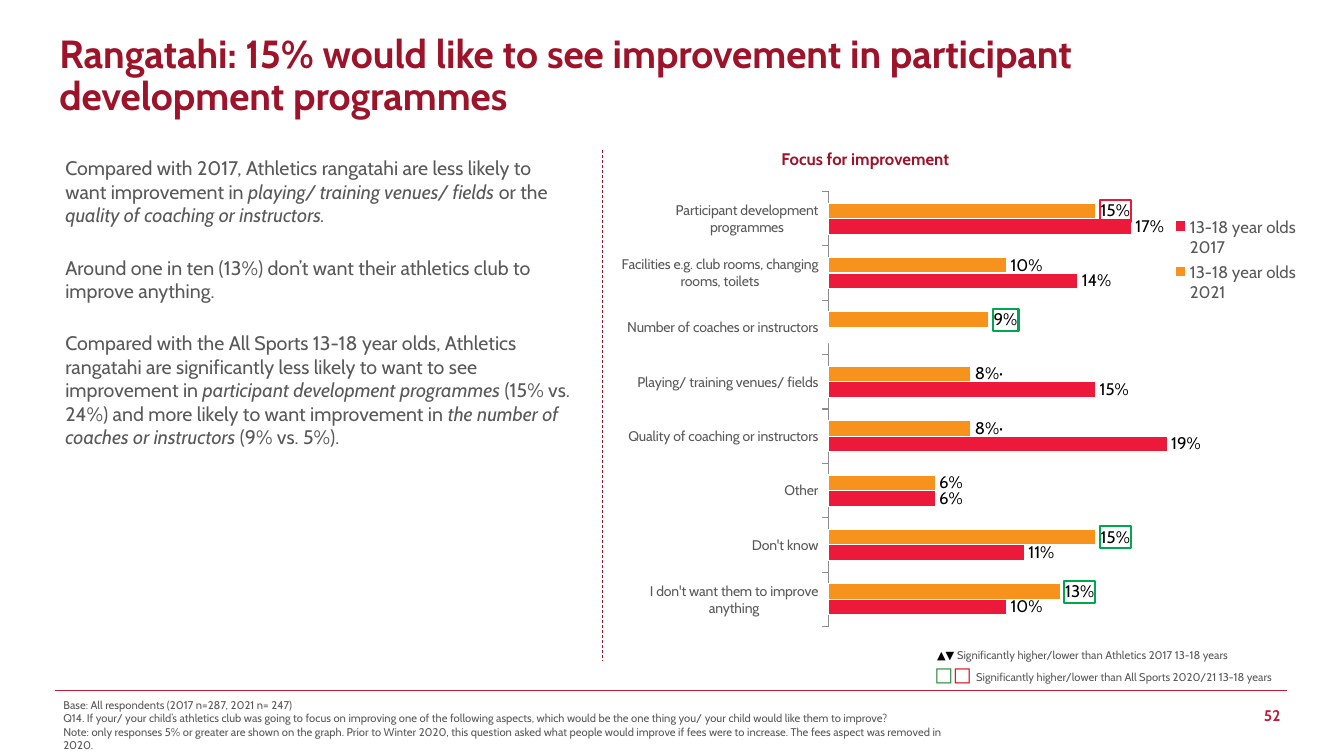
import lxml.etree
import pptx
import pptx.chart.data
import pptx.dml.color
import pptx.enum.chart
import pptx.enum.dml
import pptx.enum.shapes
import pptx.enum.text
import pptx.oxml
import pptx.oxml.ns
import pptx.util

Inches = pptx.util.Inches
Pt = pptx.util.Pt
qn = pptx.oxml.ns.qn
ALIGN = pptx.enum.text.PP_ALIGN
ANCHOR = pptx.enum.text.MSO_ANCHOR

WINE, ROSE, GREY, BLACK, WHITE = "9C132A", "BE1D37", "595959", "000000", "FFFFFF"
ORANGE, RED, GREEN = "F7931D", "ED193A", "00A651"


def tint(code):
    return pptx.dml.color.RGBColor.from_string(code)


def style(font, size=12, color=GREY, bold=False, italic=False):
    font.name, font.size = "Cabin", Pt(size)
    font.bold, font.italic = bold, italic
    font.color.rgb = tint(color)


def write(para, text, **form):
    run = para.add_run()
    run.text = text
    style(run.font, **form)


class Deck:
    def __init__(self):
        self.file = pptx.Presentation()
        self.file.slide_width, self.file.slide_height = Inches(13.33), Inches(7.5)
        self.slide = self.file.slides.add_slide(self.file.slide_layouts[6])

    def text(self, box, paras, align=ALIGN.LEFT, anchor=ANCHOR.TOP, inset=(0.1, 0.05),
             after=0, space=None, fill=None, **form):
        """Each paragraph is a list of (text, format) runs."""
        place = [Inches(n) for n in box]
        if fill:
            shape = self.slide.shapes.add_shape(pptx.enum.shapes.MSO_SHAPE.RECTANGLE, *place)
            shape.shadow.inherit = False
            shape.fill.solid()
            shape.fill.fore_color.rgb = tint(fill)
            shape.line.fill.background()
        else:
            shape = self.slide.shapes.add_textbox(*place)
        frame = shape.text_frame
        frame.word_wrap = True
        frame.vertical_anchor = anchor
        frame.margin_left = frame.margin_right = Inches(inset[0])
        frame.margin_top = frame.margin_bottom = Inches(inset[1])
        for i, runs in enumerate(paras):
            para = frame.add_paragraph() if i else frame.paragraphs[0]
            para.alignment, para.space_after = align, Pt(after)
            if space:
                para.line_spacing = space
            for words, extra in runs:
                write(para, words, **{**form, **extra})

    def line(self, start, end, color, width, dash=None):
        rule = self.slide.shapes.add_connector(
            pptx.enum.shapes.MSO_CONNECTOR.STRAIGHT, *[Inches(n) for n in (*start, *end)])
        rule.line.color.rgb, rule.line.width = tint(color), Pt(width)
        if dash:
            rule.line.dash_style = dash
        lxml.etree.SubElement(rule._element.spPr, qn("a:effectLst"))

    def bars(self, box, cats, series):
        """Each series is (name, values, colour)."""
        data = pptx.chart.data.CategoryChartData(number_format="0%")
        data.categories = cats
        for name, vals, _ in series:
            data.add_series(name, vals)
        kinds = pptx.enum.chart
        chart = self.slide.shapes.add_chart(
            kinds.XL_CHART_TYPE.BAR_CLUSTERED, *[Inches(n) for n in box], data).chart
        chart.has_title = False
        style(chart.font, color=BLACK)
        # Axes
        axis = chart.category_axis
        axis.reverse_order = True
        axis.major_tick_mark = kinds.XL_TICK_MARK.OUTSIDE
        axis.format.line.color.rgb, axis.format.line.width = tint("8C8C8C"), Pt(0.75)
        style(axis.tick_labels.font, size=10)
        scale = chart.value_axis
        scale.minimum_scale, scale.maximum_scale = 0, 0.2
        scale.has_major_gridlines = scale.visible = False
        # Series
        plot = chart.plots[0]
        plot.gap_width, plot.vary_by_categories = 150, False
        for bar, (_, _, color) in zip(plot.series, series):
            bar.format.fill.solid()
            bar.format.fill.fore_color.rgb = tint(color)
            bar.format.line.color.rgb, bar.format.line.width = tint(WHITE), Pt(0.75)
            tags = bar.data_labels
            tags.show_value = True
            tags.number_format, tags.number_format_is_linked = "0%", False
            tags.position = kinds.XL_LABEL_POSITION.OUTSIDE_END
            style(tags.font, color=BLACK)
        # Legend
        chart.has_legend = True
        chart.legend.position = kinds.XL_LEGEND_POSITION.CORNER
        chart.legend.include_in_layout = False
        style(chart.legend.font)
        self.lay(chart._chartSpace.chart.plotArea, (0.307, 0.038, 0.519, 0.867), inner=True)
        self.lay(chart.legend._element, (0.8, 0.08, 0.2, 0.19))
        return plot.series

    def lay(self, part, box, inner=False):
        for old in part.findall(qn("c:layout")):
            part.remove(old)
        target = '<c:layoutTarget val="inner"/>' if inner else ""
        modes = "".join(f'<c:{k}Mode val="edge"/>' for k in "xy")
        sizes = "".join(f'<c:{k} val="{n}"/>' for k, n in zip("xywh", box))
        node = pptx.oxml.parse_xml(
            f'<c:layout {pptx.oxml.ns.nsdecls("c")}><c:manualLayout>'
            f"{target}{modes}{sizes}</c:manualLayout></c:layout>")
        first = part.find(qn("c:legendPos"))
        if first is None:
            part.insert(0, node)
        else:
            first.addnext(node)

    def label(self, bar, spot):
        """Give one point its own label and return it with its XML node."""
        tag = bar.points[spot].data_label
        tag.position = pptx.enum.chart.XL_LABEL_POSITION.OUTSIDE_END
        for node in bar.data_labels._element.findall(qn("c:dLbl")):
            if node.find(qn("c:idx")).get("val") == str(spot):
                return tag, node

    def frame(self, bar, spot, color):
        tag, node = self.label(bar, spot)
        style(tag.font, color=BLACK)
        node.find(qn("c:txPr")).addprevious(pptx.oxml.parse_xml(
            f'<c:spPr {pptx.oxml.ns.nsdecls("c", "a")}><a:ln w="19050"><a:solidFill>'
            f'<a:srgbClr val="{color}"/></a:solidFill></a:ln></c:spPr>'))

    def rename(self, bar, spot, text):
        tag, _ = self.label(bar, spot)
        write(tag.text_frame.paragraphs[0], text, color=BLACK)

    def hide(self, bar, spot):
        _, node = self.label(bar, spot)
        for child in list(node)[1:]:
            node.remove(child)
        lxml.etree.SubElement(node, qn("c:delete")).set("val", "1")


deck = Deck()
ital = {"italic": True}

# Title, page number and rules
deck.text((0.49, 0.29, 11.46, 0.93), [[(
    "Rangatahi: 15% would like to see improvement in participant development programmes", {})]],
    space=0.9, size=28, color=WINE, bold=True)
deck.text((10.38, 6.97, 2.36, 0.26), [[("52", {})]], align=ALIGN.RIGHT, inset=(0.04, 0.04),
          size=11, color=ROSE, bold=True)
deck.line((5.97, 1.49), (5.97, 6.56), WINE, 0.5, pptx.enum.dml.MSO_LINE.DASH)

# Findings
deck.text((0.55, 1.5, 5.27, 3.04), [
    [("Compared with 2017, Athletics rangatahi are less likely to want improvement in ", {}),
     ("playing/ training venues/ fields ", ital), ("or the ", {}),
     ("quality of coaching or instructors.", ital)],
    [("Around one in ten (13%) don’t want their athletics club to improve anything.", {})],
    [("Compared with the All Sports 13-18 year olds, Athletics rangatahi are significantly "
      "less likely to want to see improvement in ", {}),
     ("participant development programmes ", ital),
     ("(15% vs. 24%) and more likely to want improvement in ", {}),
     ("the number of coaches or instructors ", ital), ("(9% vs. 5%).", {})],
], after=20.5, size=14)

# Chart
deck.text((7.75, 1.43, 1.87, 0.3), [[("Focus for improvement", {})]], inset=(0, 0.05),
          color=WINE, bold=True)
now, past = deck.bars((6.12, 1.71, 6.82, 4.98), [
    "Participant development programmes", "Facilities e.g. club rooms, changing rooms, toilets",
    "Number of coaches or instructors", "Playing/ training venues/ fields",
    "Quality of coaching or instructors", "Other", "Don't know",
    "I don't want them to improve anything",
], [
    ("13-18 year olds 2021", (0.15, 0.1, 0.09, 0.08, 0.08, 0.06, 0.15, 0.13), ORANGE),
    ("13-18 year olds 2017", (0.17, 0.14, 0, 0.15, 0.19, 0.06, 0.11, 0.1), RED),
])
for spot, color in {0: RED, 2: GREEN, 6: GREEN, 7: GREEN}.items():
    deck.frame(now, spot, color)
for spot in (3, 4):
    deck.rename(now, spot, "8%·")
deck.hide(past, 2)

# Key to the marks
deck.text((9.17, 6.38, 3.68, 0.47), [
    [(" ▲▼ ", {"color": BLACK}),
     ("Significantly higher/lower than Athletics 2017 13-18 years", {})],
    [("□", {"size": 14, "color": "218535", "bold": True}),
     ("□ ", {"size": 14, "color": "DC0015", "bold": True}),
     ("Significantly higher/lower than All Sports 2020/21 13-18 years", {})],
], size=8)

# Footnotes
deck.text((0.53, 6.87, 9, 0.64), [[(note, {})] for note in (
    "Base: All respondents (2017 n=287, 2021 n= 247)",
    "Q14. If your/ your child’s athletics club was going to focus on improving one of the "
    "following aspects, which would be the one thing you/ your child would like them to improve?",
    "Note: only responses 5% or greater are shown on the graph. Prior to Winter 2020, this "
    "question asked what people would improve if fees were to increase. The fees aspect was "
    "removed in 2020.",
)], anchor=ANCHOR.BOTTOM, fill=WHITE, size=8)
deck.line((0.55, 6.85), (12.76, 6.85), ROSE, 1)

deck.file.save("out.pptx")
